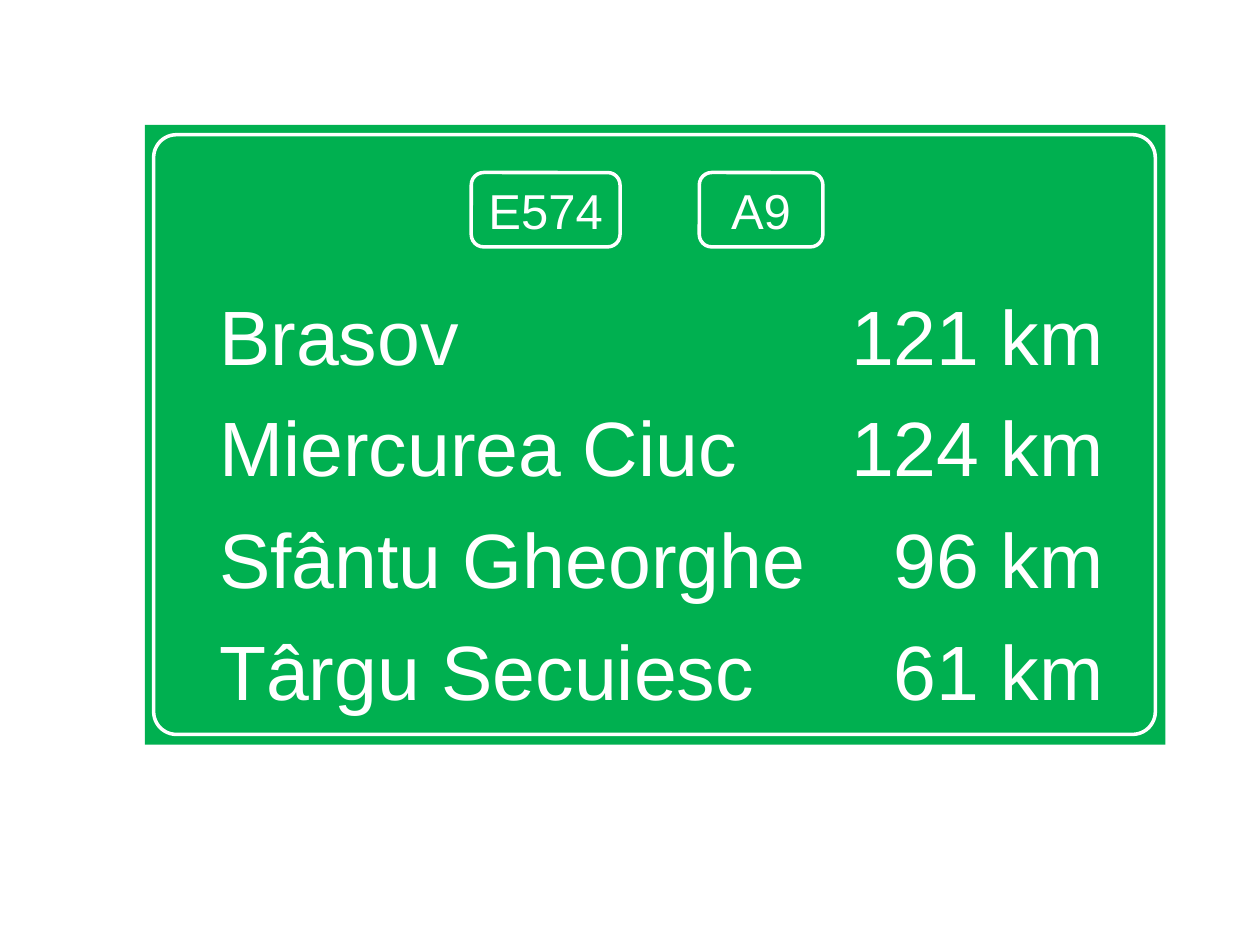
import pptx
import pptx.dml.color
import pptx.enum.shapes
import pptx.enum.text
import pptx.util
from lxml import etree

Pt = pptx.util.Pt
Shape = pptx.enum.shapes.MSO_SHAPE
Align = pptx.enum.text.PP_ALIGN
Anchor = pptx.enum.text.MSO_ANCHOR

GREEN = pptx.dml.color.RGBColor(0x00, 0xB0, 0x50)
WHITE = pptx.dml.color.RGBColor(0xFF, 0xFF, 0xFF)

DISTANCES = [
    ("Brasov", "121 km"),
    ("Miercurea Ciuc", "124 km"),
    ("Sfântu Gheorghe", "96 km"),
    ("Târgu Secuiesc", "61 km"),
]
# Road number, left edge, width
ROADS = [("E574", 269.3, 85), ("A9", 399.6, 70.6)]


def apply_format(target, values):
    for name, value in values.items():
        setattr(target, name, value)


class RoadSign:
    font_name = "Arial"
    line_width = Pt(2)

    def __init__(self, slide):
        self.slide = slide

    def panel(self, kind, left, top, width, height, fill=None, outlined=True):
        shape = self.slide.shapes.add_shape(
            kind, Pt(left), Pt(top), Pt(width), Pt(height))
        shape.shadow.inherit = False
        if fill is None:
            shape.fill.background()
        else:
            shape.fill.solid()
            shape.fill.fore_color.rgb = fill
        if outlined:
            shape.line.color.rgb = WHITE
            shape.line.width = self.line_width
        else:
            shape.line.fill.background()
        return shape

    def add_text(self, paragraph, text, size, **paragraph_format):
        apply_format(paragraph, paragraph_format)
        run = paragraph.add_run()
        run.text = text
        apply_format(run.font, {"name": self.font_name, "size": Pt(size)})
        run.font.color.rgb = WHITE

    def right_tab(self, paragraph, position):
        namespace = "{http://schemas.openxmlformats.org/drawingml/2006/main}"
        properties = paragraph._p.get_or_add_pPr()
        tabs = etree.SubElement(properties, namespace + "tabLst")
        etree.SubElement(tabs, namespace + "tab",
                         pos=str(Pt(position)), algn="r")

    def distance_board(self, rows, left, top, width, height):
        board = self.panel(Shape.RECTANGLE, left, top, width, height,
                           fill=GREEN, outlined=False)
        frame = board.text_frame
        apply_format(frame, {
            "margin_left": Pt(42.5), "margin_top": Pt(93.5),
            "margin_right": Pt(5.8), "margin_bottom": Pt(0),
            "vertical_anchor": Anchor.TOP, "word_wrap": True,
        })
        for index, row in enumerate(rows):
            paragraph = frame.add_paragraph() if index else frame.paragraphs[0]
            self.add_text(paragraph, "\t".join(row), 44,
                          alignment=Align.LEFT, space_after=Pt(11))
            self.right_tab(paragraph, 505.5)

    def border(self, left, top, width, height):
        frame = self.panel(Shape.ROUNDED_RECTANGLE, left, top, width, height)
        frame.adjustments[0] = 0.038

    def road_plate(self, number, left, top, width, height):
        plate = self.panel(Shape.ROUNDED_RECTANGLE, left, top, width, height,
                           fill=GREEN)
        apply_format(plate.text_frame, {
            "vertical_anchor": Anchor.MIDDLE, "word_wrap": True})
        self.add_text(plate.text_frame.paragraphs[0], number, 28,
                      alignment=Align.CENTER)


def main():
    presentation = pptx.Presentation()
    apply_format(presentation, {"slide_width": Pt(720),
                                "slide_height": Pt(540)})
    sign = RoadSign(presentation.slides.add_slide(
        presentation.slide_layouts[6]))

    # Green board with destinations and its border
    sign.distance_board(DISTANCES, 82.8, 71.3, 583.2, 354.2)
    sign.border(87.8, 77, 572.4, 342.7)

    # Road numbers
    for number, left, width in ROADS:
        sign.road_plate(number, left, 98.6, width, 42.5)

    presentation.save("out.pptx")


if __name__ == "__main__":
    main()
